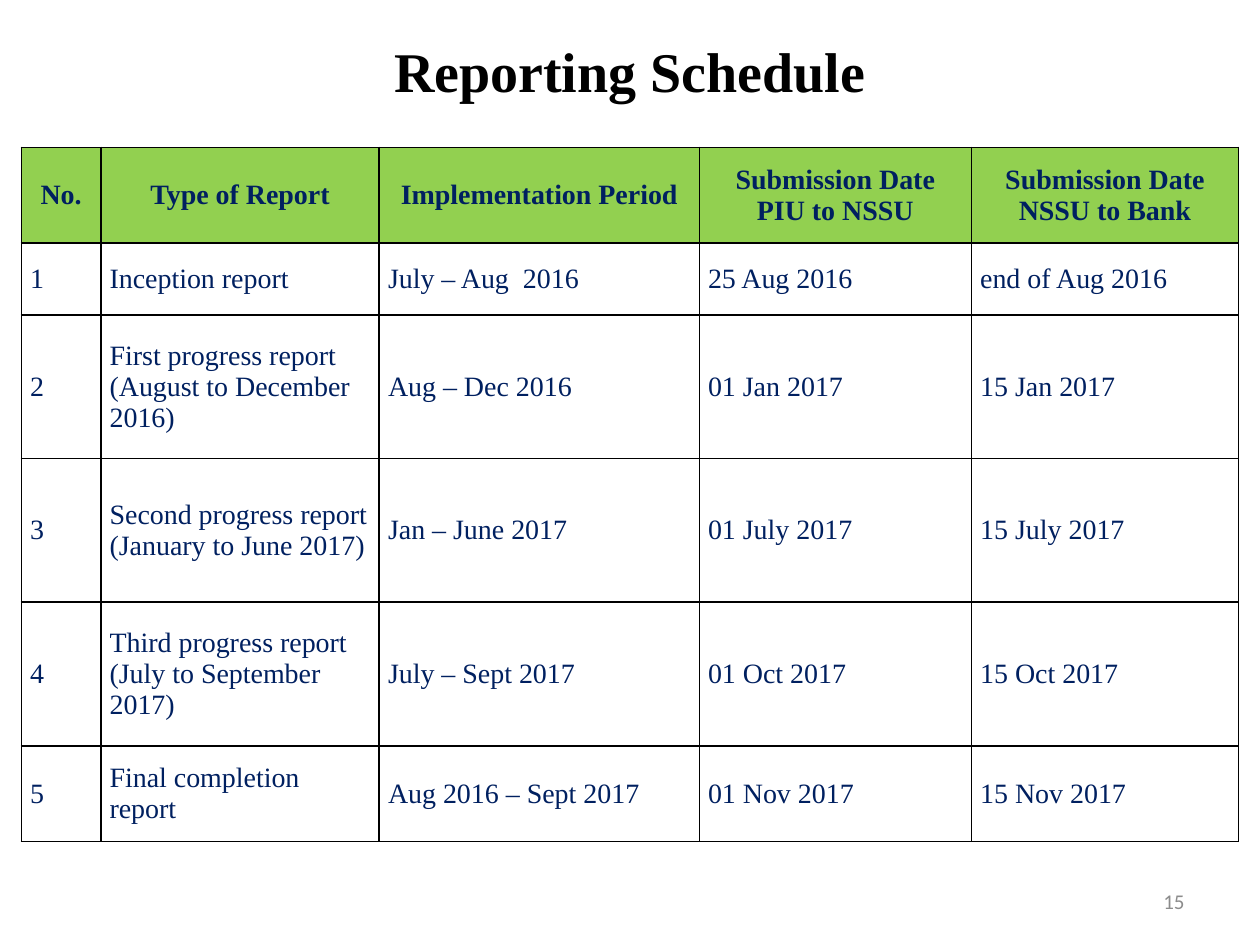
from lxml.etree import SubElement
from pptx import Presentation
from pptx.dml.color import RGBColor
from pptx.enum.text import MSO_ANCHOR as Anchor, PP_ALIGN as Align
from pptx.oxml.ns import qn
from pptx.util import Inches, Pt

SERIF = "Times New Roman"
COLUMN_WIDTHS = [0.63, 2.21, 2.54, 2.16, 2.12]
ROW_HEIGHTS = [0.76, 0.57, 1.14, 1.14, 1.14, 0.76]
SCHEDULE = [
    ["No.", "Type of Report", "Implementation Period",
     "Submission Date\nPIU to NSSU", "Submission Date\nNSSU to Bank"],
    ["1", "Inception report", "July – Aug  2016", "25 Aug 2016", "end of Aug 2016"],
    ["2", "First progress report (August to December 2016)",
     "Aug – Dec 2016", "01 Jan 2017", "15 Jan 2017"],
    ["3", "Second progress report (January to June 2017)",
     "Jan – June 2017", "01 July 2017", "15 July 2017"],
    ["4", "Third progress report (July to September 2017)",
     "July – Sept 2017", "01 Oct 2017", "15 Oct 2017"],
    ["5", "Final completion report", "Aug 2016 – Sept 2017", "01 Nov 2017", "15 Nov 2017"],
]


def write(frame, text, size, color, font=SERIF, bold=False, align=Align.LEFT):
    """Fill a text frame with one paragraph per line of text."""
    for index, line in enumerate(text.split("\n")):
        para = frame.add_paragraph() if index else frame.paragraphs[0]
        para.alignment = align
        span = para.add_run()
        span.text = line
        span.font.name = font
        span.font.size = Pt(size)
        span.font.bold = bold
        span.font.color.rgb = RGBColor.from_string(color)


def add_borders(cell):
    """Draw thin black lines on all four sides; they must precede the fill."""
    properties = cell._tc.get_or_add_tcPr()
    for side in ("a:lnL", "a:lnR", "a:lnT", "a:lnB"):
        line = SubElement(properties, qn(side), w=str(Pt(1)))
        fill = SubElement(line, qn("a:solidFill"))
        SubElement(fill, qn("a:srgbClr"), val="000000")


deck = Presentation()
deck.slide_width, deck.slide_height = Inches(10), Inches(7.5)
page = deck.slides.add_slide(deck.slide_layouts[5])

# Title, raised above the table by its bottom margin
title = page.shapes.title
title.left, title.top = Inches(0.5), Inches(0.17)
title.width, title.height = Inches(9), Inches(1.25)
title.text_frame.vertical_anchor = Anchor.MIDDLE
title.text_frame.margin_bottom = Inches(0.53)
write(title.text_frame, "Reporting Schedule", 32, "000000", bold=True, align=Align.CENTER)

# Schedule table
table = page.shapes.add_table(
    len(ROW_HEIGHTS), len(COLUMN_WIDTHS), Inches(0.17), Inches(1.17),
    Inches(sum(COLUMN_WIDTHS)), Inches(sum(ROW_HEIGHTS))).table
table.horz_banding = False
for column, width in zip(table.columns, COLUMN_WIDTHS):
    column.width = Inches(width)
for row, height in zip(table.rows, ROW_HEIGHTS):
    row.height = Inches(height)

for row_index, texts in enumerate(SCHEDULE):
    is_header = row_index == 0
    for column_index, text in enumerate(texts):
        cell = table.cell(row_index, column_index)
        add_borders(cell)
        cell.fill.solid()
        cell.fill.fore_color.rgb = RGBColor.from_string("92D050" if is_header else "FFFFFF")
        cell.vertical_anchor = Anchor.MIDDLE
        cell.margin_left = cell.margin_right = Inches(0.07)
        cell.margin_top = cell.margin_bottom = 0
        write(cell.text_frame, text, 16, "002060", bold=is_header,
              align=Align.CENTER if is_header else Align.LEFT)

# Page number
number_box = page.shapes.add_textbox(Inches(7.17), Inches(6.95), Inches(2.33), Inches(0.4))
number_box.text_frame.word_wrap = True
number_box.text_frame.vertical_anchor = Anchor.MIDDLE
write(number_box.text_frame, "15", 12, "8C8C8C", font="Calibri", align=Align.RIGHT)

deck.save("out.pptx")
